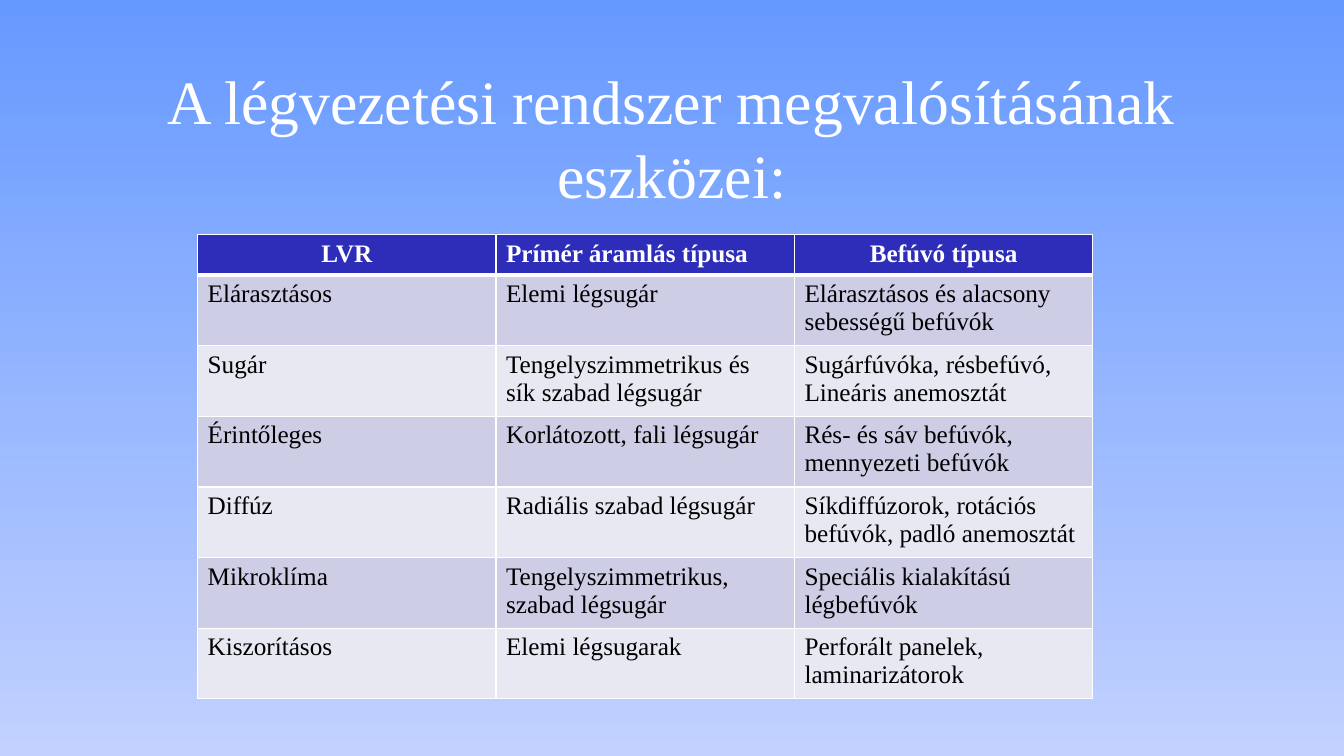
from lxml.etree import SubElement
from pptx import Presentation
from pptx.dml.color import RGBColor
from pptx.enum.text import MSO_ANCHOR as Anchor, PP_ALIGN as Align
from pptx.oxml.ns import qn
from pptx.util import Inches, Pt

TITLE = "A légvezetési rendszer megvalósításának eszközei:"
HEADERS = [
    ("LVR", Align.CENTER),
    ("Prímér áramlás típusa", Align.LEFT),
    ("Befúvó típusa", Align.CENTER),
]
SYSTEMS = [
    ("Elárasztásos", "Elemi légsugár", "Elárasztásos és alacsony sebességű befúvók"),
    ("Sugár", "Tengelyszimmetrikus és sík szabad légsugár",
     "Sugárfúvóka, résbefúvó,\nLineáris anemosztát"),
    ("Érintőleges", "Korlátozott, fali légsugár", "Rés- és sáv befúvók, mennyezeti befúvók"),
    ("Diffúz", "Radiális szabad légsugár",
     "Síkdiffúzorok, rotációs befúvók, padló anemosztát"),
    ("Mikroklíma", "Tengelyszimmetrikus, szabad légsugár", "Speciális kialakítású légbefúvók"),
    ("Kiszorításos", "Elemi légsugarak", "Perforált panelek, laminarizátorok"),
]
COLORS = {
    "sky_top": "6699FF", "sky_bottom": "C2D1FF", "white": "FFFFFF", "black": "000000",
    "header": "2D2DB9", "band_dark": "CDCDE6", "band_light": "E8E8F3",
}
FONT = "Times New Roman"
COLUMN_WIDTH, HEADER_HEIGHT, ROW_HEIGHT = 2.96, 0.37, 0.65
THIN, THICK = 1, 3


def color(name):
    return RGBColor.from_string(COLORS[name])


def write(frame, text, align, size, ink, bold=False):
    frame.text = text
    for para in frame.paragraphs:
        para.alignment = align
        for span in para.runs:
            for name, value in {"name": FONT, "size": Pt(size), "bold": bold}.items():
                setattr(span.font, name, value)
            span.font.color.rgb = color(ink)


def add_borders(cell, widths):
    """Draw white cell borders; widths maps the sides L, R, T, B to points."""
    properties = cell._tc.get_or_add_tcPr()
    for side, width in widths.items():
        line = SubElement(properties, qn(f"a:ln{side}"), w=str(Pt(width)))
        fill = SubElement(line, qn("a:solidFill"))
        SubElement(fill, qn("a:srgbClr"), val=COLORS["white"])


def paint_background(page):
    fill = page.background.fill
    fill.gradient()
    fill.gradient_angle = 270
    for stop, name, position in zip(fill.gradient_stops, ("sky_top", "sky_bottom"), (0, 1)):
        stop.color.rgb = color(name)
        stop.position = position


def add_title(page):
    box = page.shapes.add_textbox(Inches(1), Inches(0.67), Inches(11.33), Inches(1.38))
    frame = box.text_frame
    frame.word_wrap = True
    frame.vertical_anchor = Anchor.MIDDLE
    write(frame, TITLE, Align.CENTER, 44, "white")


def add_systems_table(page):
    rows = [HEADERS] + [[(text, Align.LEFT) for text in system] for system in SYSTEMS]
    height = HEADER_HEIGHT + ROW_HEIGHT * len(SYSTEMS)
    table = page.shapes.add_table(
        len(rows), len(HEADERS), Inches(1.96), Inches(2.33),
        Inches(COLUMN_WIDTH * len(HEADERS)), Inches(height)).table
    for column in table.columns:
        column.width = Inches(COLUMN_WIDTH)
    for r, row in enumerate(rows):
        is_header = r == 0
        table.rows[r].height = Inches(HEADER_HEIGHT if is_header else ROW_HEIGHT)
        band = "header" if is_header else ("band_light", "band_dark")[r % 2]
        widths = {"L": THIN, "R": THIN, "T": THICK if r == 1 else THIN,
                  "B": THICK if is_header else THIN}
        for c, (text, align) in enumerate(row):
            cell = table.cell(r, c)
            write(cell.text_frame, text, align, 18, "white" if is_header else "black", is_header)
            add_borders(cell, widths)
            cell.fill.solid()
            cell.fill.fore_color.rgb = color(band)


def main():
    deck = Presentation()
    deck.slide_width, deck.slide_height = Inches(13.33), Inches(7.5)
    page = deck.slides.add_slide(deck.slide_layouts[6])
    paint_background(page)
    add_title(page)
    add_systems_table(page)
    deck.save("out.pptx")


if __name__ == "__main__":
    main()
